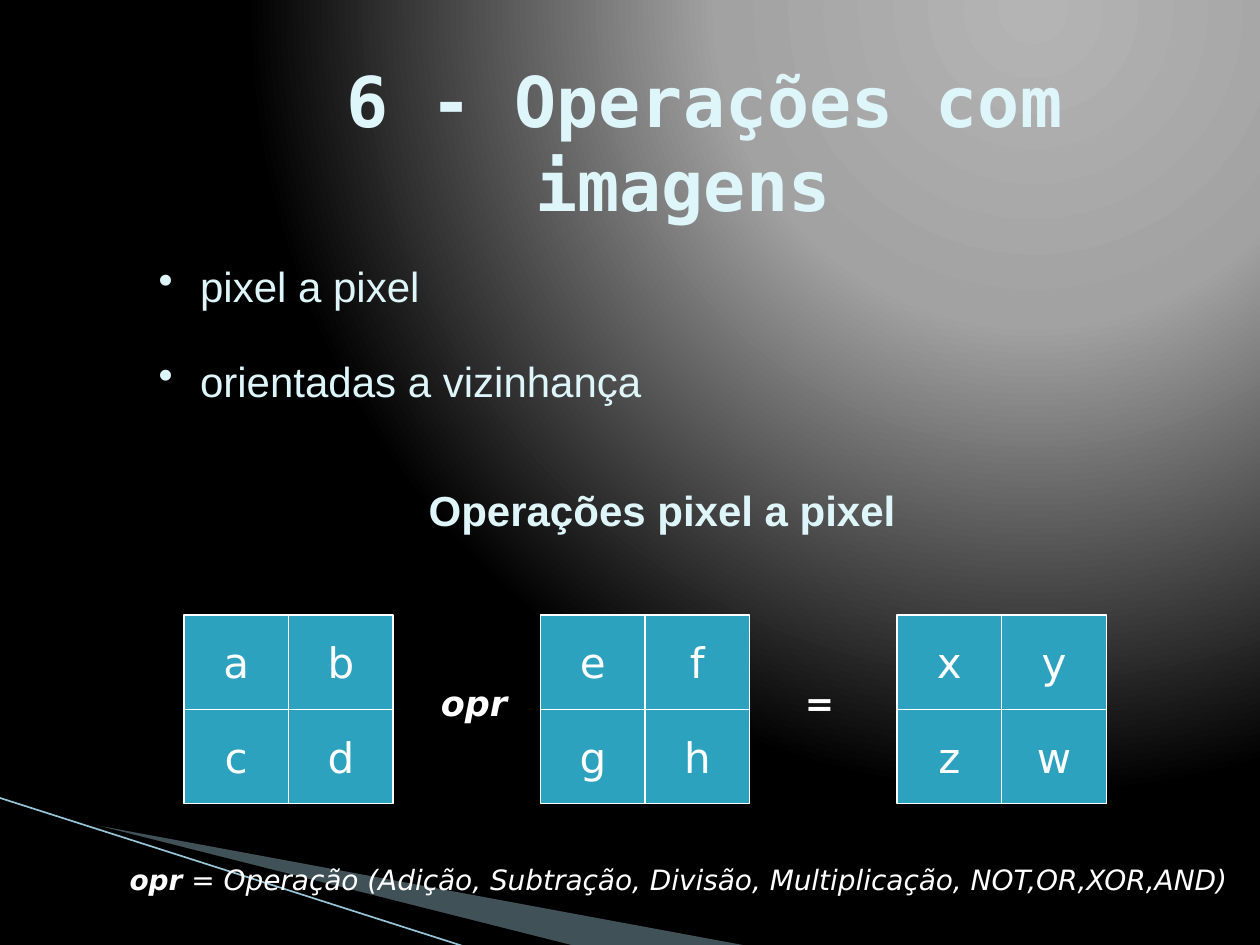
"""Build the slide on pixel-by-pixel image operations."""
from dataclasses import dataclass

from lxml.etree import SubElement
from pptx import Presentation
from pptx.dml.color import RGBColor
from pptx.enum.shapes import MSO_CONNECTOR, MSO_SHAPE
from pptx.enum.text import MSO_ANCHOR, MSO_AUTO_SIZE, PP_ALIGN
from pptx.oxml import parse_xml
from pptx.oxml.ns import nsdecls, qn
from pptx.util import Inches, Pt


@dataclass(frozen=True)
class Theme:
    ice: str = "DEF5FA"
    white: str = "FFFFFF"
    black: str = "000000"
    cell: str = "2DA2BF"
    wedge: str = "A0CBDC"
    stripe: str = "97C5D8"
    mono: str = "DejaVu Sans Mono"
    sans: str = "DejaVu Sans"
    body: str = "Arial"
    title_pt: int = 40
    body_pt: int = 24
    sign_pt: int = 20
    note_pt: int = 16


T = Theme()
TITLE = " 6 - Operações com imagens"
BULLETS = ["pixel a pixel", "orientadas a vizinhança"]
HEADING = "Operações pixel a pixel"
MATRICES = ["abcd", "efgh", "xyzw"]
SIGNS = [("opr", 3.4, 0.83), ("=", 6.29, 0.5)]
NOTE = [("opr", True),
        (" = Operação (Adição, Subtração, Divisão, Multiplicação, NOT,OR,XOR,AND)", False)]
GLOW = [(0, "B4B4B4"), (40, "A2A2A2"), (100, T.black)]
WEDGES = [([(0.55, 6.51), (5.95, 7.51), (4.56, 7.51), (0.55, 6.5)], T.wedge, 40),
          ([(0.53, 6.49), (4.57, 7.51), (3.72, 7.52), (0.54, 6.5)], T.black, 100)]
STRIPE = [-0.01, 6.33, 3.71, 7.52]
CELL_W, CELL_H = 0.83, 0.75
GRID_LEFT, GRID_TOP, GRID_STEP = 1.46, 4.88, 2.83


def rgb(color):
    return RGBColor.from_string(color)


def style(p, size, font, color, bold=None, italic=None, align=None):
    f = p.font
    f.size, f.name, f.bold, f.italic = Pt(size), font, bold, italic
    f.color.rgb = rgb(color)
    p.alignment = align


def add_text(s, text, left, top, width, height, wrap=True):
    tf = s.shapes.add_textbox(*map(Inches, (left, top, width, height))).text_frame
    tf.word_wrap = wrap
    tf.text = text
    return tf.paragraphs[0]


def paint_background(s):
    stops = "".join(f'<a:gs pos="{pos * 1000}"><a:srgbClr val="{c}"/></a:gs>' for pos, c in GLOW)
    s.background.fill.solid()
    bg = s.background._cSld.bg.bgPr
    bg.replace(bg[0], parse_xml(
        f'<a:gradFill rotWithShape="1" {nsdecls("a")}><a:gsLst>{stops}</a:gsLst><a:path path="circle">'
        '<a:fillToRect l="65000" t="0" r="0" b="98000"/></a:path></a:gradFill>'))


def add_decoration(s):
    for points, color, alpha in WEDGES:
        start, *rest = [tuple(map(Inches, pt)) for pt in points]
        sp = s.shapes.build_freeform(*start).add_line_segments(rest).convert_to_shape()
        sp.shadow.inherit = False
        sp.fill.solid()
        sp.fill.fore_color.rgb = rgb(color)
        sp.line.fill.background()
        if alpha < 100:
            clr = sp.fill._xPr.find(qn("a:solidFill"))[0]
            SubElement(clr, qn("a:alpha"), val=str(alpha * 1000))
    line = s.shapes.add_connector(MSO_CONNECTOR.STRAIGHT, *map(Inches, STRIPE))
    line.line.color.rgb = rgb(T.stripe)
    line.line.width = Pt(0.95)
    SubElement(line._element.spPr, qn("a:effectLst"))


def add_title(s):
    title = s.shapes.title
    title.left, title.top, title.width, title.height = map(Inches, (1.17, 0.5, 8.5, 1.25))
    tf = title.text_frame
    tf.text = TITLE
    tf.word_wrap, tf.auto_size = True, MSO_AUTO_SIZE.NONE
    tf.vertical_anchor = MSO_ANCHOR.MIDDLE
    style(tf.paragraphs[0], T.title_pt, T.mono, T.ice, bold=True, align=PP_ALIGN.CENTER)


def add_bullets(s):
    for row, text in enumerate(BULLETS):
        p = add_text(s, text, 1.16, 2.02 + row * 0.75, 8.75, 0.5)
        pr = p._p.get_or_add_pPr()
        pr.set("marL", str(Inches(0.33)))
        pr.set("indent", str(-Inches(0.33)))
        SubElement(pr, qn("a:buChar"), char="•")
        style(p, T.body_pt, T.body, T.ice)


def add_matrix(s, letters, left):
    group = s.shapes.add_group_shape()
    for i, letter in enumerate(letters):
        row, col = divmod(i, 2)
        box = (left + col * CELL_W, GRID_TOP + row * CELL_H, CELL_W, CELL_H)
        sp = group.shapes.add_shape(MSO_SHAPE.RECTANGLE, *map(Inches, box))
        sp.shadow.inherit = False
        sp.fill.solid()
        sp.fill.fore_color.rgb = rgb(T.cell)
        sp.line.color.rgb = rgb(T.white)
        sp.line.width = Pt(0.75)
        tf = sp.text_frame
        tf.text = letter
        tf.word_wrap, tf.vertical_anchor = False, MSO_ANCHOR.MIDDLE
        style(tf.paragraphs[0], T.body_pt, T.sans, T.white, align=PP_ALIGN.CENTER)


def main():
    prs = Presentation()
    prs.slide_width, prs.slide_height = Inches(10), Inches(7.5)
    s = prs.slides.add_slide(prs.slide_layouts[5])
    paint_background(s)
    add_decoration(s)
    add_title(s)
    add_bullets(s)
    p = add_text(s, HEADING, 0.88, 3.8, 8.75, 0.5)
    style(p, T.body_pt, T.body, T.ice, bold=True, align=PP_ALIGN.CENTER)
    for i, letters in enumerate(MATRICES):
        add_matrix(s, letters, GRID_LEFT + i * GRID_STEP)
    for text, left, width in SIGNS:
        p = add_text(s, text, left, 5.36, width, 0.43)
        style(p, T.sign_pt, T.sans, T.white, bold=True, italic=True)
    p = add_text(s, "", 0.93, 6.8, 9.17, 0.37, wrap=False)
    style(p, T.note_pt, T.sans, T.white, italic=True)
    for text, bold in NOTE:
        r = p.add_run()
        r.text, r.font.bold = text, bold
    prs.save("out.pptx")


if __name__ == "__main__":
    main()
